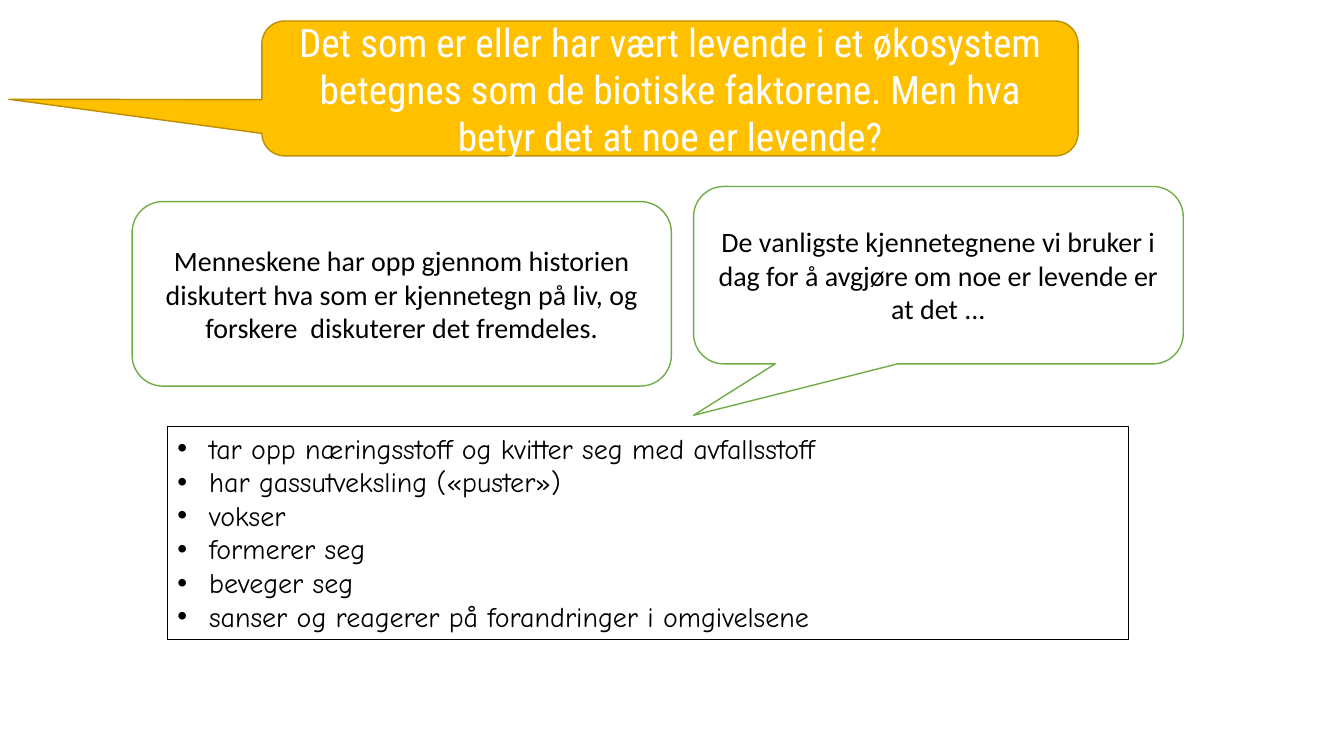
from dataclasses import dataclass
from typing import Optional

from lxml import etree
from pptx import Presentation
from pptx.dml.color import RGBColor
from pptx.enum import shapes, text
from pptx.oxml import ns
from pptx.util import Cm, Pt


@dataclass(frozen=True)
class Theme:
    ink: RGBColor = RGBColor(0x00, 0x00, 0x00)
    paper: RGBColor = RGBColor(0xFF, 0xFF, 0xFF)
    green: RGBColor = RGBColor(0x70, 0xAD, 0x47)
    amber: RGBColor = RGBColor(0xFF, 0xC0, 0x00)
    amber_edge: RGBColor = RGBColor(0xBD, 0x8E, 0x00)
    question_font: str = "Roboto Condensed"
    bubble_font: str = "Calibri"
    list_font: str = "Comic Neue"
    question_size: int = 28
    body_size: int = 20


THEME = Theme()


@dataclass(frozen=True)
class Box:
    """Position and size in centimetres."""
    left: float
    top: float
    width: float
    height: float


@dataclass(frozen=True)
class Bubble:
    box: Box
    preset: shapes.MSO_SHAPE
    fill: Optional[RGBColor]
    edge: RGBColor
    edge_width: float = 1
    adjustments: tuple[float, ...] = ()
    words: str = ""


CALLOUT = shapes.MSO_SHAPE.ROUNDED_RECTANGULAR_CALLOUT
QUESTION = ("Det som er eller har vært levende i et økosystem betegnes som de "
            "biotiske faktorene. Men hva betyr det at noe er levende?")
QUESTION_BUBBLE = Bubble(Box(6.6, 0.53, 20.57, 3.4), CALLOUT, THEME.amber,
                         THEME.amber_edge, adjustments=(-0.81, 0.08, 0.17))
TODAY_BUBBLE = Bubble(
    Box(17.48, 4.7, 12.34, 4.47), CALLOUT, THEME.paper, THEME.green,
    adjustments=(-0.5, 0.79, 0.17),
    words="De vanligste kjennetegnene vi bruker i dag for å avgjøre om noe er "
          "levende er at det ...")
HISTORY_BUBBLE = Bubble(
    Box(3.33, 5.08, 13.59, 4.65), shapes.MSO_SHAPE.ROUNDED_RECTANGLE,
    THEME.paper, THEME.green,
    words="Menneskene har opp gjennom historien diskutert hva som er kjennetegn "
          "på liv, og forskere  diskuterer det fremdeles.")
SIGNS_FRAME = Bubble(Box(4.22, 10.74, 24.23, 5.38), shapes.MSO_SHAPE.RECTANGLE,
                     None, THEME.ink, edge_width=0.75)
SIGNS_OF_LIFE = (
    "tar opp næringsstoff og kvitter seg med avfallsstoff",
    "har gassutveksling («puster»)",
    "vokser",
    "formerer seg",
    "beveger seg",
    "sanser og reagerer på forandringer i omgivelsene",
)


def add_run(paragraph, words: str, font: str, size: int, color: RGBColor) -> None:
    run = paragraph.add_run()
    run.text = words
    run.font.name = font
    run.font.size = Pt(size)
    run.font.color.rgb = color


def add_bullet(paragraph) -> None:
    properties = paragraph._p.get_or_add_pPr()
    properties.set("marL", str(Cm(0.8)))
    properties.set("indent", str(-Cm(0.8)))
    etree.SubElement(properties, ns.qn("a:buFont"), typeface="Arial")
    etree.SubElement(properties, ns.qn("a:buChar"), char="•")


def add_bubble(slide, bubble: Bubble):
    box = bubble.box
    shape = slide.shapes.add_shape(bubble.preset, Cm(box.left), Cm(box.top),
                                   Cm(box.width), Cm(box.height))
    for index, value in enumerate(bubble.adjustments):
        shape.adjustments[index] = value
    shape.shadow.inherit = False
    if bubble.fill is None:
        shape.fill.background()
    else:
        shape.fill.solid()
        shape.fill.fore_color.rgb = bubble.fill
    shape.line.color.rgb = bubble.edge
    shape.line.width = Pt(bubble.edge_width)
    frame = shape.text_frame
    frame.word_wrap = True
    if bubble.words:
        frame.vertical_anchor = text.MSO_ANCHOR.MIDDLE
        paragraph = frame.paragraphs[0]
        paragraph.alignment = text.PP_ALIGN.CENTER
        add_run(paragraph, bubble.words, THEME.bubble_font, THEME.body_size, THEME.ink)
    return shape


def add_signs(slide) -> None:
    frame = add_bubble(slide, SIGNS_FRAME).text_frame
    frame.vertical_anchor = text.MSO_ANCHOR.TOP
    for index, sign in enumerate(SIGNS_OF_LIFE):
        paragraph = frame.add_paragraph() if index else frame.paragraphs[0]
        paragraph.alignment = text.PP_ALIGN.LEFT
        add_bullet(paragraph)
        add_run(paragraph, sign, THEME.list_font, THEME.body_size, THEME.ink)


def add_question(slide) -> None:
    """Lay the title placeholder over the amber callout."""
    callout = add_bubble(slide, QUESTION_BUBBLE)
    title = slide.shapes.title
    title.left, title.top = callout.left, callout.top
    title.width, title.height = callout.width, callout.height
    callout._element.addnext(title._element)
    frame = title.text_frame
    frame.word_wrap = True
    frame.auto_size = text.MSO_AUTO_SIZE.NONE
    frame.vertical_anchor = text.MSO_ANCHOR.MIDDLE
    frame.margin_left = frame.margin_right = Cm(0.45)
    paragraph = frame.paragraphs[0]
    paragraph.alignment = text.PP_ALIGN.CENTER
    add_run(paragraph, QUESTION, THEME.question_font, THEME.question_size, THEME.paper)


def main() -> None:
    deck = Presentation()
    deck.slide_width, deck.slide_height = Cm(33.87), Cm(19.05)
    title_only = deck.slide_layouts[5]
    slide = deck.slides.add_slide(title_only)
    add_bubble(slide, TODAY_BUBBLE)
    add_signs(slide)
    add_bubble(slide, HISTORY_BUBBLE)
    add_question(slide)
    deck.save("out.pptx")


if __name__ == "__main__":
    main()
